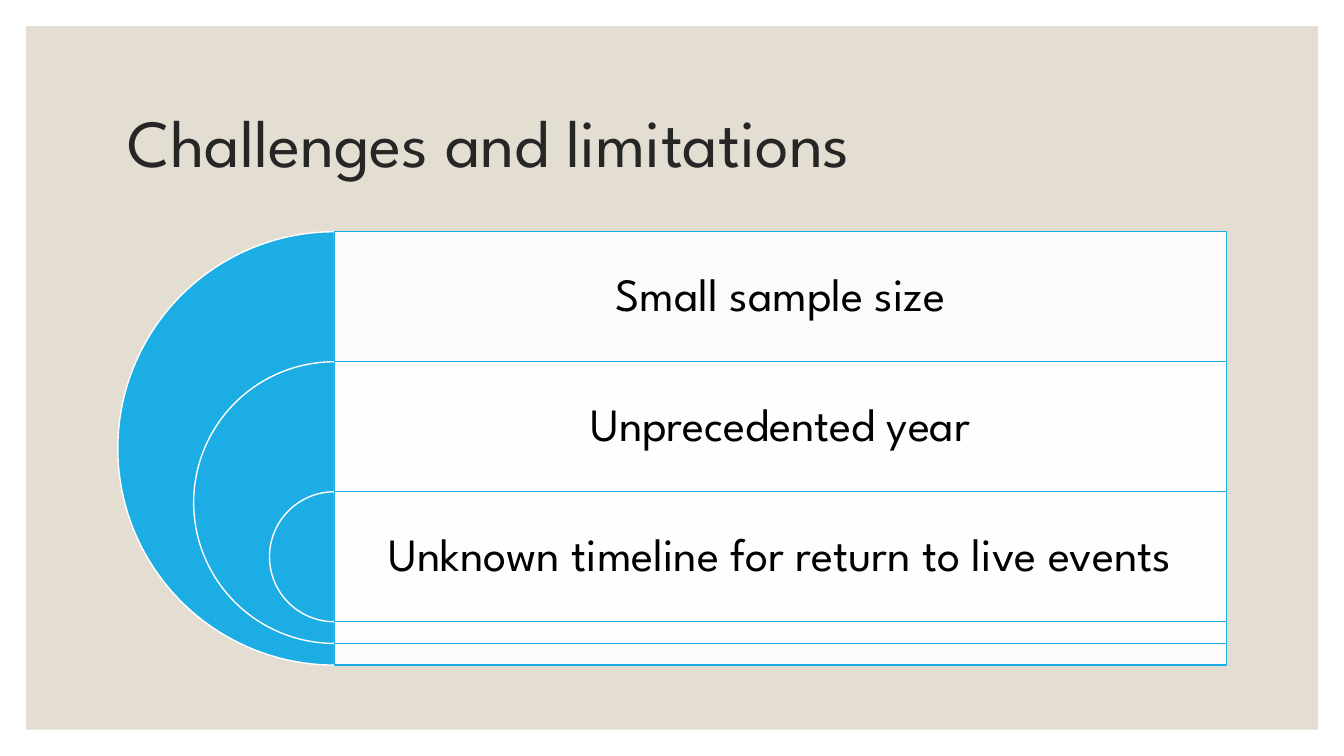
from pptx import Presentation
from pptx.dml.color import RGBColor
from pptx.enum.shapes import MSO_SHAPE
from pptx.enum.text import MSO_ANCHOR, MSO_AUTO_SIZE, PP_ALIGN
from pptx.oxml.ns import qn
from pptx.util import Cm, Pt
from lxml import etree

RECT, PIE = MSO_SHAPE.RECTANGLE, MSO_SHAPE.PIE
MIDDLE = MSO_ANCHOR.MIDDLE
LEFT, CENTER = PP_ALIGN.LEFT, PP_ALIGN.CENTER
FIXED = MSO_AUTO_SIZE.NONE

FONT = "League Spartan"
BLUE, WHITE, BEIGE = "1CADE4", "FFFFFF", "E3DED1"
LIMITS = [
    "Small sample size",
    "Unprecedented year",
    "Unknown timeline for return to live events",
]


def paint(part, color):
    """Give a fill, or any other solid colour holder, a hex colour."""
    if hasattr(part, "solid"):
        part.solid()
        part = part.fore_color
    part.rgb = RGBColor.from_string(color)


def add_block(shapes, kind, box, fill, line=None):
    block = shapes.add_shape(kind, *map(Cm, box))
    block.shadow.inherit = False
    paint(block.fill, fill)
    if line:
        paint(block.line.color, line)
        block.line.width = Pt(1)
    else:
        block.line.fill.background()
    return block


def set_text(shape, text, size, color, align):
    frame = shape.text_frame
    frame.text = text
    frame.word_wrap = True
    frame.auto_size = FIXED
    frame.vertical_anchor = MIDDLE
    para = frame.paragraphs[0]
    para.alignment = align
    para.line_spacing = 0.9
    para.font.name = FONT
    para.font.size = Pt(size)
    paint(para.font.color, color)
    return frame


def add_panel(slide, box):
    """Lay the beige panel behind everything else."""
    panel = add_block(slide.shapes, RECT, box, BEIGE)
    slide.shapes._spTree.insert(2, panel._element)


def set_title(slide, text, box):
    title = slide.shapes.title
    title.left, title.top, title.width, title.height = map(Cm, box)
    set_text(title, text, 48, "262626", LEFT)


def add_label(shapes, text, box):
    label = shapes.add_textbox(*map(Cm, box))
    frame = set_text(label, text, 33, "000000", CENTER)
    frame.margin_left = frame.margin_right = Cm(0.36)
    frame.margin_top = frame.margin_bottom = Cm(0.36)


def add_target(slide, items, box):
    """Nest half discs in the box, each with a bar and its label."""
    left, top, width, height = box
    shapes = slide.shapes.add_group_shape().shapes
    axis = left + height / 2
    wide = width - height / 2
    row = 0.3 * height
    for i, text in enumerate(items):
        size = height * (1 - 0.35 * i)
        y = top + i * row
        disc = add_block(shapes, PIE, (axis - size / 2, y, size, size), BLUE, WHITE)
        disc.adjustments[0], disc.adjustments[1] = 54, 162
        bar = add_block(shapes, RECT, (axis, y, wide, size), WHITE, BLUE)
        tint = bar.fill._xPr.find(qn("a:solidFill"))[0]
        etree.SubElement(tint, qn("a:alpha")).set("val", "90000")
        add_label(shapes, text, (axis, y, wide, row))


def main():
    deck = Presentation()
    deck.slide_width, deck.slide_height = Cm(33.87), Cm(19.05)
    slide = deck.slides.add_slide(deck.slide_layouts[5])
    add_panel(slide, (0.66, 0.66, 32.56, 17.73))
    set_title(slide, "Challenges and limitations", (2.97, 1.78, 27.94, 3.81))
    add_target(slide, LIMITS, (2.97, 5.84, 27.94, 10.92))
    deck.save("out.pptx")


if __name__ == "__main__":
    main()
